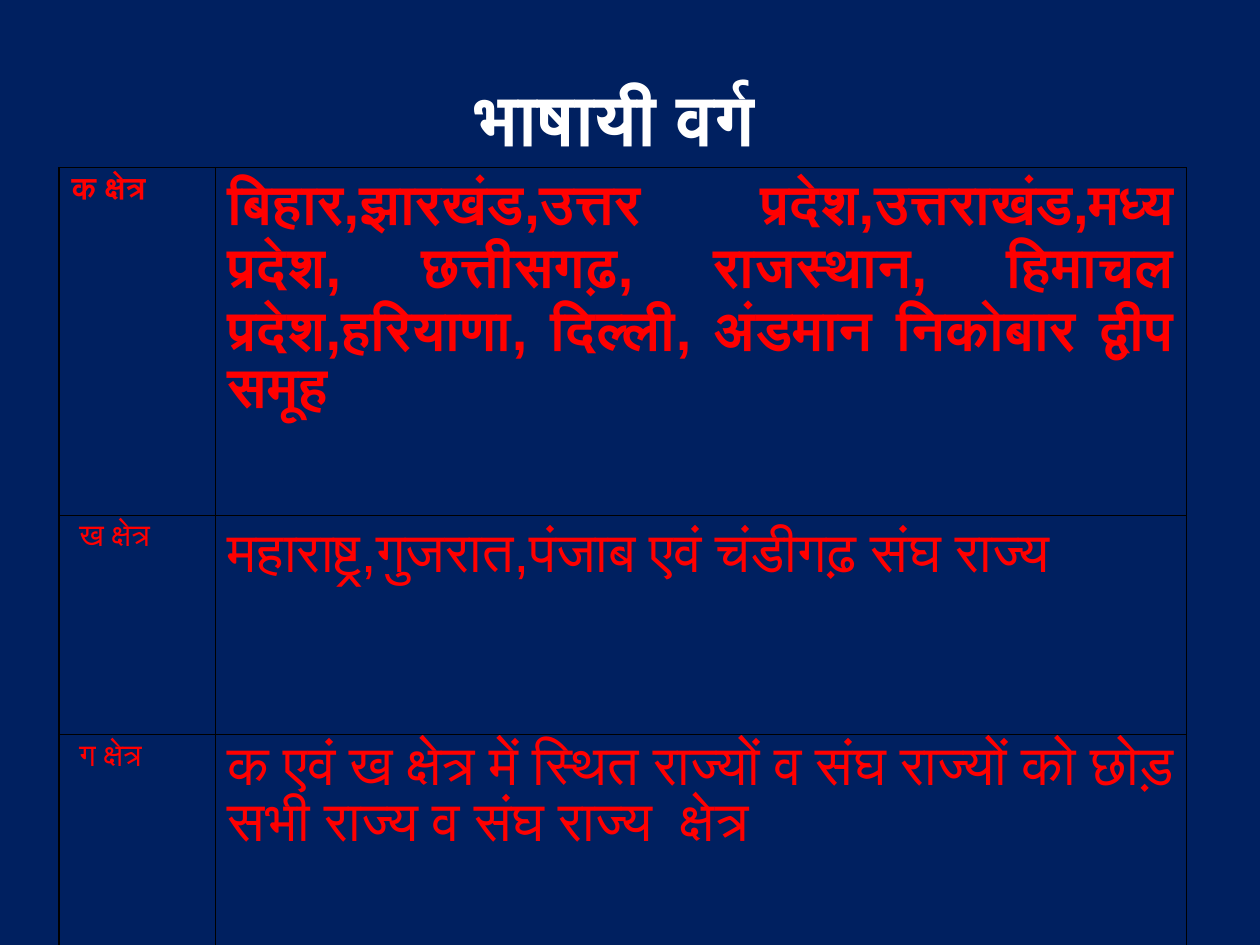
import lxml.etree
import pptx
import pptx.dml.color
import pptx.enum.text
import pptx.oxml.ns
import pptx.util

Cm = pptx.util.Cm
ALIGN = pptx.enum.text.PP_ALIGN
REGIONS = [
    ("क क्षेत्र", "बिहार,झारखंड,उत्तर प्रदेश,उत्तराखंड,मध्य प्रदेश, छत्तीसगढ़, "
     "राजस्थान, हिमाचल प्रदेश,हरियाणा, दिल्ली, अंडमान निकोबार द्वीप समूह", 7.01, True),
    (" ख क्षेत्र", "महाराष्ट्र,गुजरात,पंजाब एवं चंडीगढ़ संघ राज्य", 4.42, False),
    (" ग क्षेत्र", "क एवं ख क्षेत्र में स्थित राज्यों व संघ राज्यों को छोड़ "
     "सभी राज्य व संघ राज्य  क्षेत्र", 6.48, False),
]


def color(value):
    """Return the colour for a hex string."""
    return pptx.dml.color.RGBColor.from_string(value)


def add_run(paragraph, text, size, font, ink, bold):
    """Append one formatted run."""
    run = paragraph.add_run()
    run.text = text
    run.font.size = pptx.util.Pt(size)
    run.font.name = font
    run.font.bold = bold
    run.font.color.rgb = color(ink)


def add_borders(cell):
    """Draw a thin black line on each side of a cell."""
    properties = cell._tc.get_or_add_tcPr()
    for index, side in enumerate(("lnL", "lnR", "lnT", "lnB")):
        line = lxml.etree.Element(pptx.oxml.ns.qn(f"a:{side}"), w="9525")
        fill = lxml.etree.SubElement(line, pptx.oxml.ns.qn("a:solidFill"))
        lxml.etree.SubElement(fill, pptx.oxml.ns.qn("a:srgbClr"), val="000000")
        properties.insert(index, line)


def place_title(slide, left, top, width, height):
    """Place the heading, indented from the left of its box."""
    title = slide.shapes.title
    title.left, title.top, title.width, title.height = map(Cm, (left, top, width, height))
    title.text_frame.vertical_anchor = pptx.enum.text.MSO_ANCHOR.MIDDLE
    heading = title.text_frame.paragraphs[0]
    heading.alignment = ALIGN.LEFT
    heading._p.get_or_add_pPr().set("marL", str(Cm(8.05)))
    add_run(heading, "भाषायी वर्ग", 41, "DejaVu Sans Mono", "FFFFFF", True)


def place_regions(slide, left, top, width, label_width):
    """Place the table of language regions and their states."""
    height = sum(region[2] for region in REGIONS)
    frame = slide.shapes.add_table(len(REGIONS), 2, *map(Cm, (left, top, width, height)))
    table = frame.table
    table.first_row = table.horz_banding = False
    table.columns[0].width = Cm(label_width)
    table.columns[1].width = Cm(width - label_width)
    for row, (label, states, row_height, bold) in zip(table.rows, REGIONS):
        row.height = Cm(row_height)
        entries = ((label, 18, ALIGN.LEFT), (states, 32, ALIGN.JUSTIFY))
        for cell, (text, size, alignment) in zip(row.cells, entries):
            cell.fill.background()
            add_borders(cell)
            paragraph = cell.text_frame.paragraphs[0]
            paragraph.alignment = alignment
            add_run(paragraph, text, size, "Arial", "FF0000", bold)


def main():
    """Build and save the slide."""
    deck = pptx.Presentation()
    deck.slide_width, deck.slide_height = Cm(25.4), Cm(19.05)
    slide = deck.slides.add_slide(deck.slide_layouts[5])
    slide.background.fill.solid()
    slide.background.fill.fore_color.rgb = color("002060")
    place_title(slide, 1.27, 0.76, 22.86, 3.18)
    place_regions(slide, 1.19, 3.38, 22.72, 3.15)
    deck.save("out.pptx")


if __name__ == "__main__":
    main()
